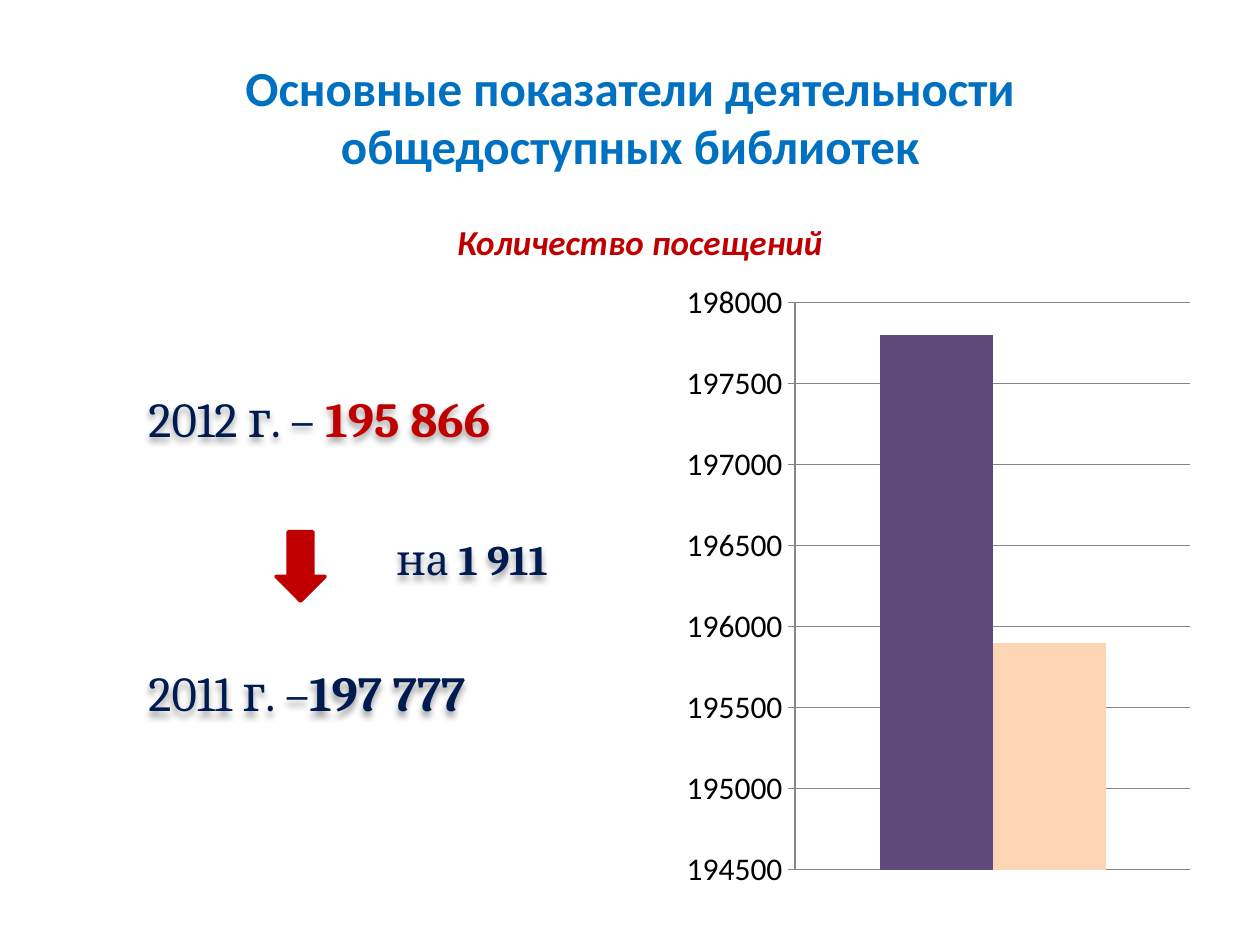
from dataclasses import dataclass

from lxml.etree import SubElement
from pptx import Presentation
from pptx.chart.data import CategoryChartData
from pptx.dml.color import RGBColor
from pptx.enum.chart import XL_CHART_TYPE, XL_TICK_LABEL_POSITION, XL_TICK_MARK
from pptx.enum.shapes import MSO_SHAPE
from pptx.enum.text import MSO_ANCHOR, PP_ALIGN
from pptx.oxml import parse_xml
from pptx.oxml.ns import qn
from pptx.util import Inches, Pt

DRAWING_NS = "http://schemas.openxmlformats.org/drawingml/2006/main"


@dataclass(frozen=True)
class Theme:
    sans: str = "Calibri"
    serif: str = "Cambria"
    blue: str = "0070C0"
    navy: str = "001B50"
    red: str = "C00000"
    purple: str = "604A7B"
    peach: str = "FCD5B5"
    black: str = "000000"
    gray: str = "878787"
    large: int = 28
    medium: int = 24
    small: int = 20
    axis: int = 18


THEME = Theme()


def rgb(color):
    return RGBColor.from_string(color)


def style_font(font, name, size, color, bold=False, italic=False):
    font.name, font.size = name, Pt(size)
    font.color.rgb = rgb(color)
    font.bold, font.italic = bold, italic


def add_text_box(slide, left, top, width, height):
    box = slide.shapes.add_textbox(Inches(left), Inches(top), Inches(width), Inches(height))
    box.text_frame.word_wrap = True
    return box


def add_heading(slide, text, bounds, size, color, italic=False):
    frame = add_text_box(slide, *bounds).text_frame
    frame.vertical_anchor = MSO_ANCHOR.MIDDLE
    frame.text = text
    paragraph = frame.paragraphs[0]
    paragraph.alignment = PP_ALIGN.CENTER
    style_font(paragraph.runs[0].font, THEME.sans, size, color, True, italic)


def add_soft_shadow(box):
    """Give an unfilled box a shadow, which falls from its letters."""
    box._element.spPr.append(parse_xml(
        f'<a:effectLst xmlns:a="{DRAWING_NS}">'
        '<a:outerShdw blurRad="50800" dist="38100" dir="5400000" algn="t" rotWithShape="0">'
        f'<a:srgbClr val="{THEME.black}"><a:alpha val="40000"/></a:srgbClr>'
        '</a:outerShdw></a:effectLst>'))


def add_visit_figures(slide):
    box = add_text_box(slide, 0.83, 2.49, 3.94, 4.29)
    add_soft_shadow(box)
    frame = box.text_frame
    frame.margin_top = Inches(0.59)
    # label, number, number colour, size, left indent in inches, space before in points
    lines = [
        ("2012 г. – ", "195 866", THEME.red, THEME.large, 0.25, 0),
        ("на ", "1 911", THEME.navy, THEME.medium, 2.22, 49.5),
        ("2011 г. –", "197 777", THEME.navy, THEME.large, 0.25, 45),
    ]
    for index, (label, number, color, size, indent, space) in enumerate(lines):
        paragraph = frame.add_paragraph() if index else frame.paragraphs[0]
        paragraph._p.get_or_add_pPr().set("marL", str(Inches(indent)))
        paragraph.space_before = Pt(space)
        for text, run_color, bold in ((label, THEME.navy, False), (number, color, True)):
            run = paragraph.add_run()
            run.text = text
            style_font(run.font, THEME.serif, size, run_color, bold)


def set_plot_area(chart, **fractions):
    """Fix the inner plot area as fractions of the chart."""
    plot_area = chart._chartSpace.chart.plotArea
    layout = plot_area.find(qn("c:layout"))
    if layout is None:
        layout = plot_area.makeelement(qn("c:layout"))
        plot_area.insert(0, layout)
    manual = SubElement(layout, qn("c:manualLayout"))
    settings = {"layoutTarget": "inner", "xMode": "edge", "yMode": "edge", **fractions}
    for name, value in settings.items():
        SubElement(manual, qn(f"c:{name}")).set("val", str(value))


def add_visits_chart(slide):
    data = CategoryChartData()
    data.categories = ["1"]
    data.add_series("Series 1", [197800])
    data.add_series("Series 2", [195900])
    chart = slide.shapes.add_chart(
        XL_CHART_TYPE.COLUMN_CLUSTERED,
        Inches(5.16), Inches(2.25), Inches(4.42), Inches(4.95), data).chart
    style_font(chart.font, THEME.sans, THEME.axis, THEME.black)
    chart.has_legend = chart.has_title = False
    set_plot_area(chart, x=0.26, y=0.03, w=0.71, h=0.91)

    plot = chart.plots[0]
    plot.vary_by_categories = False
    plot.gap_width, plot.overlap = 150, 0
    for series, color in zip(plot.series, (THEME.purple, THEME.peach)):
        series.format.fill.solid()
        series.format.fill.fore_color.rgb = rgb(color)

    chart.category_axis.visible = False
    axis = chart.value_axis
    axis.minimum_scale, axis.maximum_scale, axis.major_unit = 194500, 198000, 500
    axis.major_tick_mark = XL_TICK_MARK.OUTSIDE
    axis.tick_label_position = XL_TICK_LABEL_POSITION.NEXT_TO_AXIS
    axis.has_major_gridlines = True
    for line in (axis.format.line, axis.major_gridlines.format.line):
        line.color.rgb = rgb(THEME.gray)
        line.width = Pt(0.75)


def add_down_arrow(slide):
    arrow = slide.shapes.add_shape(
        MSO_SHAPE.DOWN_ARROW, Inches(2.19), Inches(4.22), Inches(0.39), Inches(0.55))
    arrow.shadow.inherit = False
    arrow.fill.solid()
    arrow.fill.fore_color.rgb = rgb(THEME.red)
    arrow.line.color.rgb = rgb(THEME.red)
    arrow.line.width = Pt(2)
    SubElement(arrow.line._ln, qn("a:round"))


def main():
    presentation = Presentation()
    presentation.slide_width, presentation.slide_height = Inches(10), Inches(7.5)
    slide = presentation.slides.add_slide(presentation.slide_layouts[6])
    add_heading(slide, "Основные показатели деятельности общедоступных библиотек",
                (0.5, 0.4, 9, 1.04), THEME.large, THEME.blue)
    add_visit_figures(slide)
    add_heading(slide, "Количество посещений ", (3.35, 1.7, 3.52, 0.44),
                THEME.small, THEME.red, italic=True)
    add_visits_chart(slide)
    add_down_arrow(slide)
    presentation.save("out.pptx")


if __name__ == "__main__":
    main()
